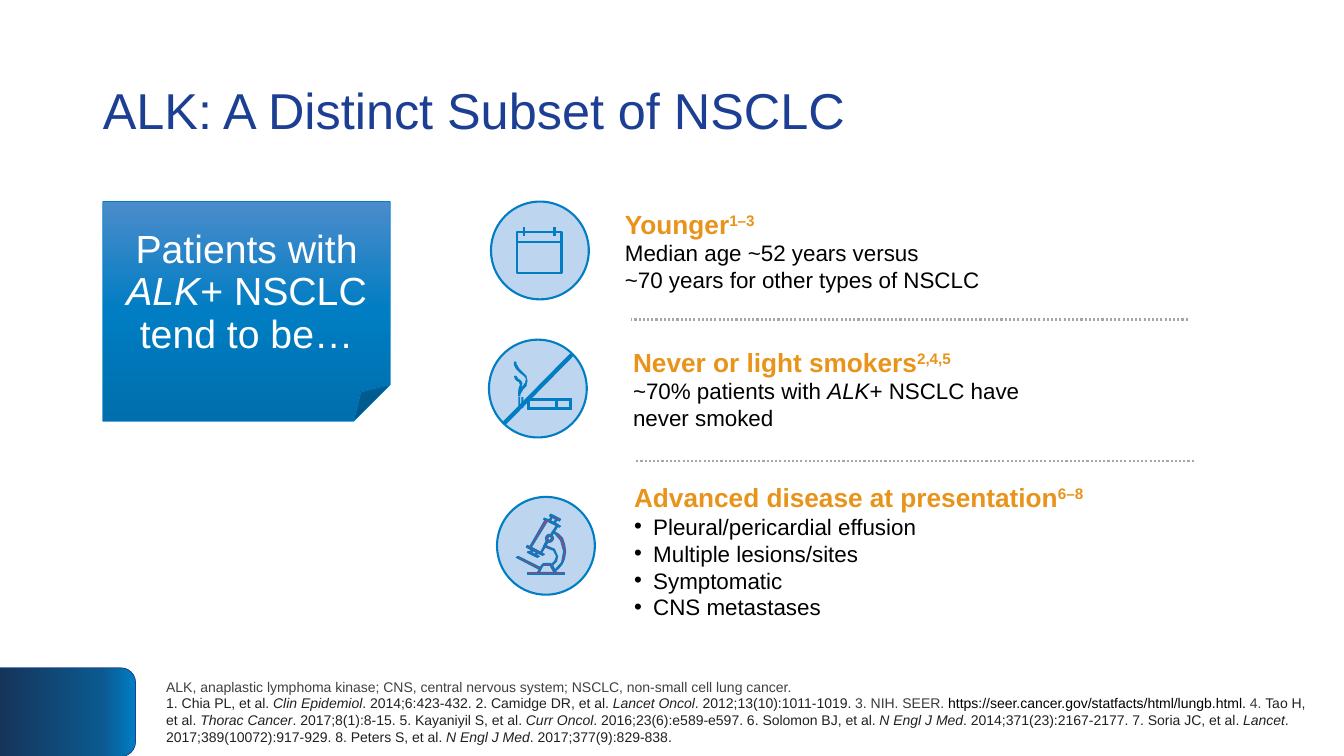
from copy import deepcopy
from lxml.etree import SubElement
from pptx import Presentation
from pptx.dml.color import RGBColor
from pptx.enum.dml import MSO_LINE
from pptx.enum.shapes import MSO_CONNECTOR, MSO_SHAPE
from pptx.enum.text import MSO_ANCHOR, MSO_AUTO_SIZE, PP_ALIGN
from pptx.oxml.ns import qn
from pptx.util import Pt

PX = 9144  # EMU per px, 100 px to the inch
NAVY, BLUE, PALE = RGBColor(0x1C, 0x3F, 0x93), RGBColor(0, 0x7D, 0xC3), RGBColor(0xBE, 0xD5, 0xF0)
ORANGE, ROSE = RGBColor(0xE8, 0x93, 0x1A), RGBColor(0xBF, 0x3A, 0x61)
GREY, BLACK, WHITE = RGBColor(0xA6, 0xA6, 0xA6), RGBColor(0, 0, 0), RGBColor(255, 255, 255)
NOTE, CITE, SITE = RGBColor(0x40, 0x40, 0x40), RGBColor(0x21, 0x21, 0x21), RGBColor(0x3A, 0x3A, 0x3A)

# style: size, colour, font attributes, baseline
STYLES = {
    "title": (36, NAVY, {}, 0),
    "card": (28, WHITE, {}, 0),
    "gene": (28, WHITE, {"italic": True}, 0),
    "head": (18.7, ORANGE, {"bold": True}, 0),
    "sup": (18.7, ORANGE, {"bold": True}, 30000),
    "body": (16, BLACK, {}, 0),
    "ital": (16, BLACK, {"italic": True}, 0),
    "note": (10, NOTE, {}, 0),
    "cite": (10, CITE, {}, 0),
    "book": (10, CITE, {"italic": True}, 0),
    "site": (10, SITE, {}, 0),
    "link": (10, BLACK, {}, 0),
}

TITLE = [[("ALK: A Distinct Subset of NSCLC", "title")]]
CARD = [[("Patients with ", "card"), ("ALK", "gene"), ("+ NSCLC tend to be…", "card")]]
YOUNG = [[("Younger", "head"), ("1–3\n", "sup"),
          ("Median age ~52 years versus\n~70 years for other types of NSCLC", "body")]]
SMOKE = [[("Never or light smokers", "head"), ("2,4,5", "sup")],
         [("~70% patients with ", "body"), ("ALK", "ital"), ("+ NSCLC have\nnever smoked", "body")]]
SIGNS = ["Pleural/pericardial effusion", "Multiple lesions/sites", "Symptomatic", "CNS metastases"]
LATE = [[("Advanced disease at presentation", "head"), ("6–8", "sup")]] + [[(s, "body")] for s in SIGNS]
FOOT = [[
    ("ALK, anaplastic lymphoma kinase; CNS, central nervous system; "
     "NSCLC, non-small cell lung cancer.\n", "note"),
    ("1. Chia PL, et al. ", "cite"), ("Clin Epidemiol", "book"),
    (". 2014;6:423-432. 2. Camidge DR, et al. ", "cite"), ("Lancet Oncol", "book"),
    (". 2012;13(10):1011-1019. ", "cite"), ("3. NIH. SEER. ", "site"),
    ("https://seer.cancer.gov/statfacts/html/lungb.html. ", "link"),
    ("4. ", "site"), ("Tao H, et al. ", "cite"), ("Thorac Cancer", "book"),
    (". 2017;8(1):8-15. 5. Kayaniyil S, et al. ", "cite"), ("Curr Oncol", "book"),
    (". 2016;23(6):e589-e597. 6. Solomon BJ, et al. ", "cite"), ("N Engl J Med", "book"),
    (". 2014;371(23):2167-2177. 7. Soria JC, et al. ", "cite"), ("Lancet", "book"),
    (". 2017;389(10072):917-929. 8. Peters S, et al. ", "cite"), ("N Engl J Med", "book"),
    (". 2017;377(9):829-838.", "cite"),
]]
BOXES = [(YOUNG, (610, 201, 377, 95)), (SMOKE, (618, 338, 408, 95)), (LATE, (619, 472, 472, 149))]
RULES = [(626, 317, 1178), (631, 457, 1184)]
CARD_STOPS = [(0, "4B8CCB"), (50, "007DC3"), (100, "006FAD")]
TAB_STOPS = [(0, "007DC3"), (25, "0B598F"), (100, "15345A")]

# each outline is a list of closed rings; inner rings are holes
CIG = [[(523, 406), (523, 395), (567, 395), (567, 406)],
       [(525, 404), (551, 404), (551, 397), (525, 397)],
       [(553, 397), (553, 404), (565, 404), (565, 397)]]
PLUME = [[(510, 359), (512, 359), (512, 361), (515, 366), (519, 370), (522, 373), (523, 378),
          (522, 383), (519, 386), (516, 391), (516, 393), (514, 393), (514, 389), (515, 384),
          (516, 382), (515, 379), (513, 378), (511, 376), (510, 373), (512, 373), (514, 376),
          (516, 377), (518, 380), (517, 385), (521, 380), (522, 376), (520, 373), (516, 370),
          (512, 366), (510, 362)]]
SCOPE = [
    [[(555, 523), (539, 515), (540, 514), (556, 522)]],
    [[(538, 551), (522, 543), (523, 541), (540, 550)]],
    [[(555, 517), (545, 512), (546, 510), (556, 515)]],
    [[(533, 553), (523, 548), (524, 547), (535, 552)]],
    [[(535, 565), (512, 553), (514, 552), (536, 563)]],
    [[(550, 520), (545, 518), (544, 517), (547, 512), (548, 511), (553, 514), (553, 515)],
     [(546, 517), (549, 519), (551, 515), (548, 513)]],
    [[(531, 552), (526, 549), (525, 548), (528, 545), (529, 544), (534, 547), (534, 548)],
     [(527, 548), (531, 550), (532, 548), (529, 546)]],
    [[(551, 569), (534, 569), (533, 568), (537, 561), (539, 559), (546, 559), (548, 561), (552, 568)],
     [(535, 568), (550, 568), (547, 562), (546, 561), (539, 561), (538, 562)]],
    [[(536, 550), (525, 544), (525, 543), (541, 515), (543, 515), (553, 520), (554, 521),
      (547, 532), (545, 532), (543, 534), (544, 536), (544, 537), (537, 549)],
     [(527, 543), (536, 548), (542, 537), (541, 534), (545, 531), (546, 531), (552, 521), (543, 517)]],
    [[(550, 567), (549, 567), (546, 562), (547, 560), (550, 557), (552, 552), (549, 546), (541, 543),
      (539, 542), (542, 536), (543, 536), (545, 537), (547, 534), (546, 531), (548, 527), (549, 527),
      (554, 530), (558, 534), (560, 540), (561, 547), (560, 554), (558, 559), (554, 564)],
     [(548, 561), (550, 566), (557, 558), (559, 547), (556, 536), (549, 528), (547, 531), (549, 534),
      (545, 538), (543, 538), (541, 541), (550, 545), (553, 552), (552, 557)]],
]


def write(frame, paras, **form):
    """Fill a text frame with styled runs; form holds paragraph attributes."""
    frame.vertical_anchor = MSO_ANCHOR.MIDDLE
    for n, runs in enumerate(paras):
        para = frame.paragraphs[0] if n == 0 else frame.add_paragraph()
        for key, val in form.items():
            setattr(para, key, val)
        for text, style in runs:
            size, color, attrs, base = STYLES[style]
            for i, line in enumerate(text.split("\n")):
                if i:
                    para.add_line_break()
                    para._p[-1].append(deepcopy(run._r.rPr))
                if not line:
                    continue
                run = para.add_run()
                run.text = line
                for key, val in {"name": "Arial", "size": Pt(size), **attrs}.items():
                    setattr(run.font, key, val)
                run.font.color.rgb = color
                if base:
                    run._r.rPr.set("baseline", str(base))


def paint(shape, fill, line, width):
    shape.shadow.inherit = False
    if fill is None:
        shape.fill.background()
    else:
        shape.fill.solid()
        shape.fill.fore_color.rgb = fill
    if line is None:
        shape.line.fill.background()
    else:
        shape.line.color.rgb = line
        shape.line.width = Pt(width)


def add(host, kind, box, fill=None, line=BLUE, width=1.5):
    shape = host.add_shape(kind, *(v * PX for v in box))
    paint(shape, fill, line, width)
    return shape


def trace(host, rings, fill, width):
    pen = host.build_freeform(*rings[0][0], scale=PX)
    for n, ring in enumerate(rings):
        if n:
            pen.move_to(*ring[0])
        pen.add_line_segments(ring[1:], close=True)
    paint(pen.convert_to_shape(), fill, BLUE, width)


def rule(host, ends, color=BLUE, width=1.5):
    line = host.add_connector(MSO_CONNECTOR.STRAIGHT, *(v * PX for v in ends))
    line.line.color.rgb = color
    line.line.width = Pt(width)
    SubElement(line._element.spPr, qn("a:effectLst"))
    return line


def blend(shape, stops):
    """Fill a shape with a top-to-bottom gradient."""
    shape.fill.gradient()
    shape.fill.gradient_angle = 270
    bag = shape._element.spPr.find(".//" + qn("a:gsLst"))
    for old in list(bag):
        bag.remove(old)
    for pos, color in stops:
        stop = SubElement(bag, qn("a:gs"), pos=str(pos * 1000))
        SubElement(stop, qn("a:srgbClr"), val=color)


def badge(left, top):
    """Start an icon group with its round backdrop."""
    host = slide.shapes.add_group_shape().shapes
    add(host, MSO_SHAPE.OVAL, (left, top, 97, 97), PALE)
    return host


deck = Presentation()
deck.slide_width, deck.slide_height = 1333 * PX, 750 * PX
slide = deck.slides.add_slide(deck.slide_layouts[5])
shapes = slide.shapes

title = shapes.title
title.left, title.top, title.width, title.height = (v * PX for v in (92, 40, 1150, 145))
title.text_frame.auto_size = MSO_AUTO_SIZE.NONE
write(title.text_frame, TITLE, alignment=PP_ALIGN.LEFT, line_spacing=0.9)

tab = add(shapes, MSO_SHAPE.ROUND_2_SAME_RECTANGLE, (23, 639, 88, 135), BLUE, NAVY, 0.5)
tab.rotation = 90
blend(tab, TAB_STOPS)
card = add(shapes, MSO_SHAPE.FOLDED_CORNER, (102, 200, 285, 218), BLUE, BLUE, 0.5)
blend(card, CARD_STOPS)
card.text_frame.word_wrap = True
write(card.text_frame, CARD, alignment=PP_ALIGN.CENTER, line_spacing=0.9)

for left, y, right in RULES:
    rule(shapes, (right, y, left, y), GREY).line.dash_style = MSO_LINE.ROUND_DOT

for paras, box in BOXES:
    frame = shapes.add_textbox(*(v * PX for v in box)).text_frame
    frame.word_wrap = False
    frame.auto_size = MSO_AUTO_SIZE.SHAPE_TO_FIT_TEXT
    write(frame, paras)
    if paras is SMOKE:
        frame.paragraphs[1].space_after = Pt(4.5)
    if paras is LATE:
        for para in frame.paragraphs[1:]:
            props = para._p.get_or_add_pPr()
            props.set("marL", str(19 * PX))
            props.set("indent", str(-19 * PX))
            SubElement(props, qn("a:buFont"), typeface="Arial")
            SubElement(props, qn("a:buChar"), char="•")

date = badge(487, 200)
add(date, MSO_SHAPE.RECTANGLE, (513, 230, 44, 41))
for ends in [(513, 240, 558, 240), (520, 225, 520, 234), (550, 225, 550, 234)]:
    rule(date, ends)

ban = badge(485, 337)
for rings in (CIG, PLUME):
    trace(ban, rings, BLUE, 0.25)
for left in (514, 517):
    add(ban, MSO_SHAPE.RECTANGLE, (left, 394, 2, 11), BLUE, None)
rule(ban, (500, 420, 568, 351), width=3)

lab = badge(493, 493)
for rings in SCOPE:
    trace(lab, rings, ROSE, 0.75)
add(lab, MSO_SHAPE.DONUT, (541, 530, 8, 8), ROSE, BLUE, 0.75)
add(lab, MSO_SHAPE.RECTANGLE, (523, 568, 37, 2), ROSE, BLUE, 0.75)

foot = shapes.add_textbox(*(v * PX for v in (155, 662, 1165, 88))).text_frame
foot.word_wrap = True
write(foot, FOOT)

deck.save("out.pptx")
